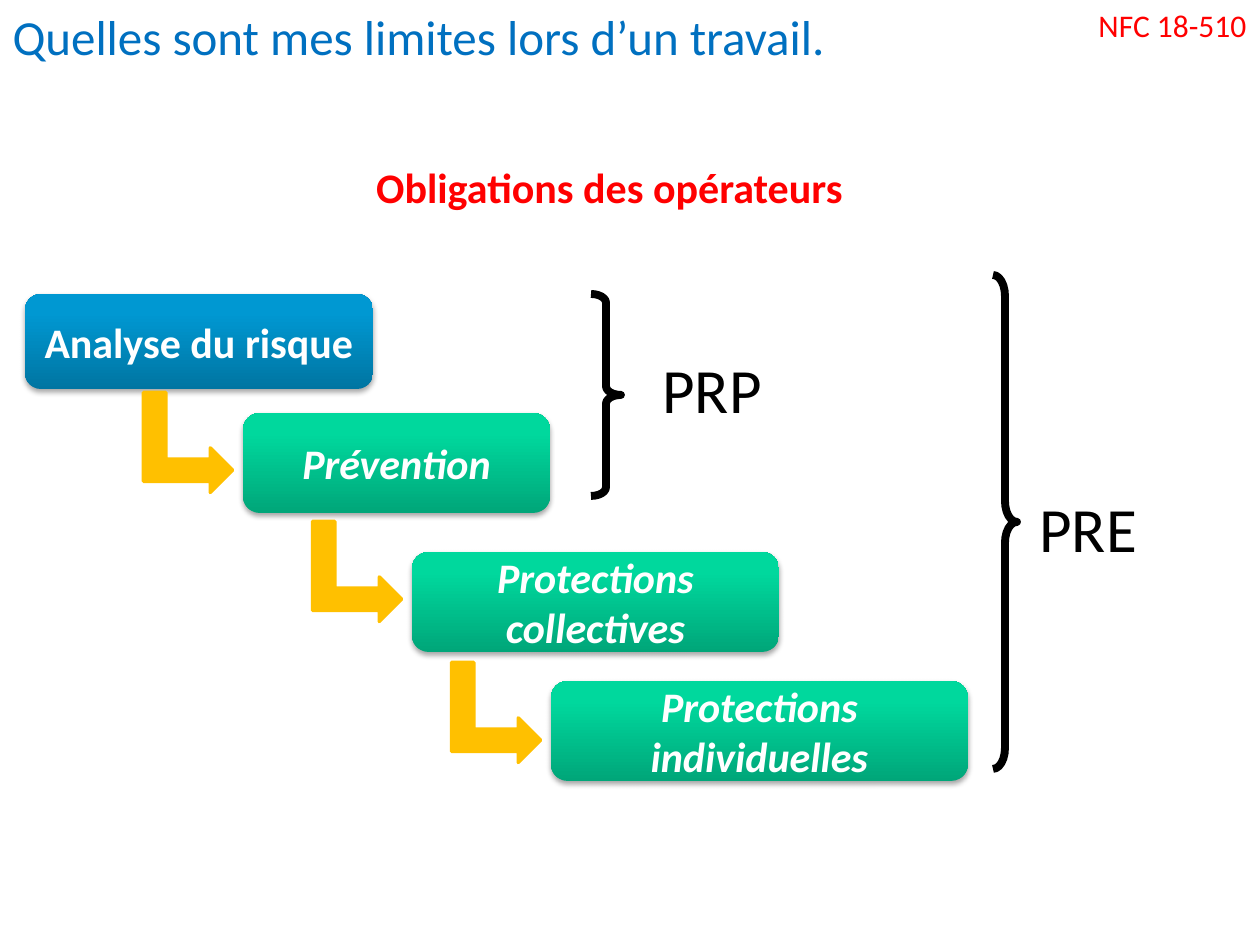
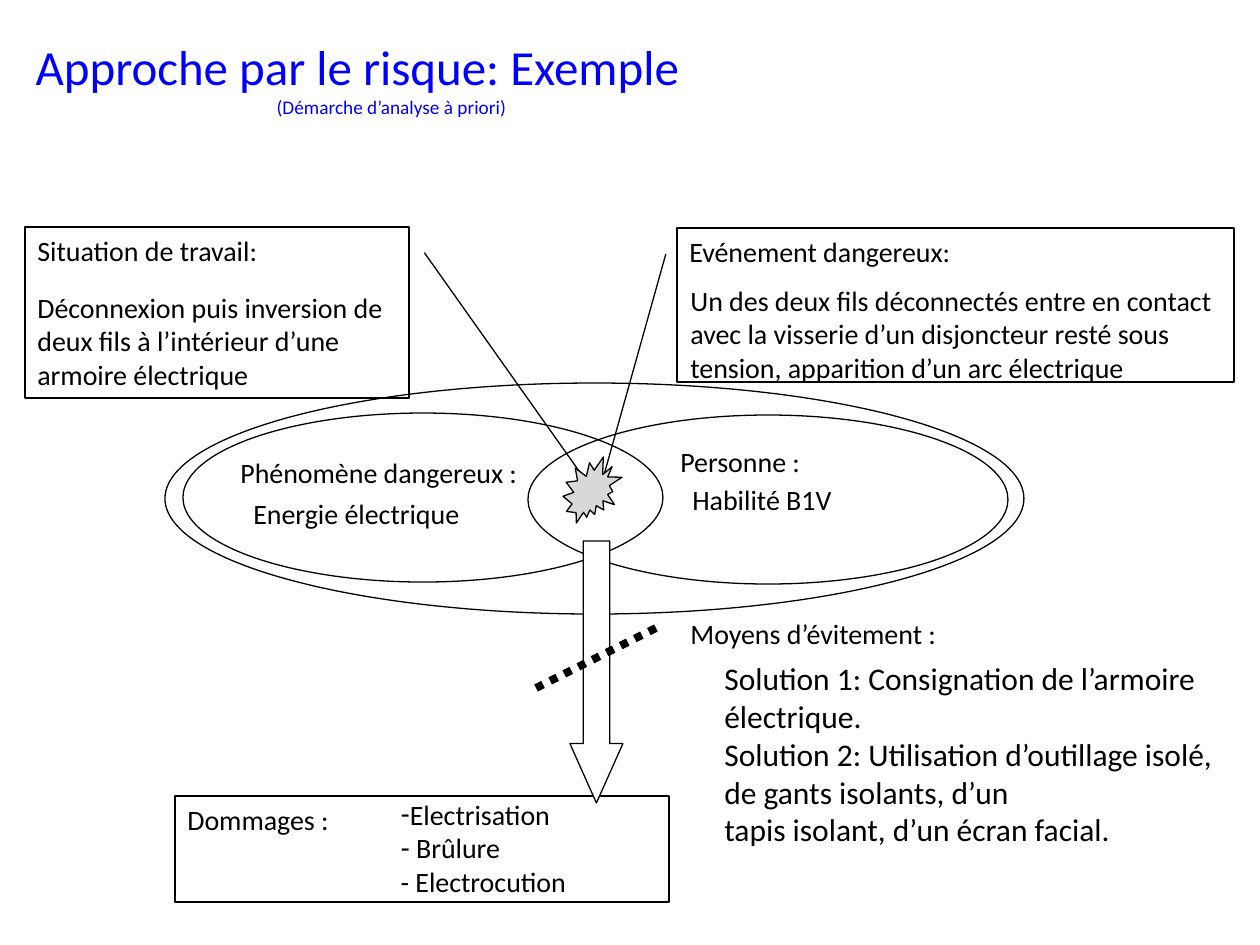
from lxml.etree import SubElement
from pptx import Presentation
from pptx.dml.color import RGBColor
from pptx.enum.dml import MSO_LINE
from pptx.enum.shapes import MSO_CONNECTOR, MSO_SHAPE as SHAPE
from pptx.enum.text import MSO_ANCHOR as ANCHOR, MSO_AUTO_SIZE, PP_ALIGN as ALIGN
from pptx.oxml.ns import qn
from pptx.util import Pt

PX = 914400 / 126
FONT = "Calibri"
BLACK, WHITE, RED, AMBER, GREY = "000000", "FFFFFF", "FF0000", "FFC000", "D8D8D8"
TITLE_BLUE, EXAMPLE_BLUE = "0070C0", "0000FF"
BLUE_GRADIENT = ("0075A2", "0098D2")
GREEN_GRADIENT = ("00A679", "00D89D")


def rgb(value):
    """Turn a hex string into a colour."""
    return RGBColor.from_string(value)


def px(*values):
    """Turn pixels into EMU."""
    return [round(v * PX) for v in values]


def within(box, x, y, w, h):
    """Place a rectangle relative to the top left of a box."""
    return box[0] + x, box[1] + y, w, h


def add_run(p, text, size=16, color=BLACK, **fmt):
    """Add a formatted run to a paragraph."""
    r = p.add_run()
    r.text = text
    for name, value in dict(name=FONT, size=Pt(size), **fmt).items():
        setattr(r.font, name, value)
    r.font.color.rgb = rgb(color)


def write(tf, lines, align=ALIGN.LEFT, anchor=ANCHOR.TOP, wrap=True, **fmt):
    """Fill a text frame with one paragraph per line."""
    frame = dict(word_wrap=wrap, vertical_anchor=anchor, auto_size=MSO_AUTO_SIZE.NONE)
    for name, value in frame.items():
        setattr(tf, name, value)
    for i, line in enumerate(lines):
        p = tf.paragraphs[0] if i == 0 else tf.add_paragraph()
        for name, value in dict(alignment=align, space_before=Pt(0)).items():
            setattr(p, name, value)
        add_run(p, line, **fmt)


def label(s, box, *lines, **fmt):
    """Add a text box."""
    write(s.shapes.add_textbox(*px(*box)).text_frame, lines, **fmt)


def place(sp, box):
    """Move a placeholder to a box."""
    for name, value in zip(("left", "top", "width", "height"), px(*box)):
        setattr(sp, name, value)


def title(s, box, text, color):
    """Place the slide title and return its text frame."""
    place(s.shapes.title, box)
    tf = s.shapes.title.text_frame
    write(tf, [text], size=28, color=color)
    return tf


def shape(s, kind, box, fill=None, line=BLACK, weight=0.75, adj=()):
    """Add a preset shape without a shadow."""
    sp = s.shapes.add_shape(kind, *px(*box))
    sp.shadow.inherit = False
    for i, value in enumerate(adj):
        sp.adjustments[i] = value
    if fill:
        sp.fill.solid()
        sp.fill.fore_color.rgb = rgb(fill)
    else:
        sp.fill.background()
    if line:
        sp.line.color.rgb = rgb(line)
        sp.line.width = Pt(weight)
    else:
        sp.line.fill.background()
    return sp


def soft_shadow(sp):
    """Give a shape a soft shadow below it."""
    effects = sp._element.spPr.find(qn("a:effectLst"))
    shadow = SubElement(effects, qn("a:outerShdw"), blurRad="40000", dist="23000",
                        dir="5400000", rotWithShape="0")
    color = SubElement(shadow, qn("a:srgbClr"), val=BLACK)
    SubElement(color, qn("a:alpha"), val="35000")


def card(s, box, text, gradient, italic):
    """Add a rounded step with a vertical gradient."""
    sp = shape(s, SHAPE.ROUNDED_RECTANGLE, box, line=None)
    sp.fill.gradient()
    sp.fill.gradient_angle = 90
    for stop, color, position in zip(sp.fill.gradient_stops, gradient, (0, 0.8)):
        stop.color.rgb = rgb(color)
        stop.position = position
    soft_shadow(sp)
    write(sp.text_frame, [text], align=ALIGN.CENTER, anchor=ANCHOR.MIDDLE,
          size=24, color=WHITE, bold=True, italic=italic)


def cascade(s, box):
    """Draw the staircase of steps joined by bent arrows."""
    card(s, within(box, 0, 0, 348, 95), "Analyse du risque", BLUE_GRADIENT, False)
    steps = [("Prévention", 218, 119, 307, 15),
             ("Protections collectives", 387, 258, 367, 25),
             ("Protections individuelles", 526, 387, 417, 13)]
    for text, x, y, w, rise in steps:
        card(s, within(box, x, y, w, 100), text, GREEN_GRADIENT, True)
        arrow = shape(s, SHAPE.BENT_UP_ARROW, within(box, x - 105, y - rise, 100, 89),
                      AMBER, AMBER, 2)
        arrow.rotation = 90


def brace(s, box, curve, text, text_box):
    """Draw a right brace and its label."""
    shape(s, SHAPE.RIGHT_BRACE, box, weight=4.5, adj=(curve, 0.5))
    label(s, within(box, *text_box), text, size=36)


def obligations_slide(prs):
    """Build the slide on the operators' obligations."""
    s = prs.slides.add_slide(prs.slide_layouts[5])
    title(s, (0, 0, 1172, 72), "Quelles sont mes limites lors d’un travail.", TITLE_BLUE)
    label(s, (1085, 0, 175, 50), "NFC 18-510", align=ALIGN.CENTER, wrap=False,
          size=18, color=RED)
    label(s, (233, 155, 753, 59), "Obligations des opérateurs", align=ALIGN.CENTER,
          size=24, color=RED, bold=True)
    cascade(s, (25, 294, 943, 487))
    brace(s, (591, 294, 30, 202), 0.29, "PRP", (59, 50, 218, 89))
    brace(s, (993, 275, 24, 494), 0.87, "PRE", (34, 208, 203, 89))


def callout(s, box, adj, heading, text, text_box):
    """Add a bordered callout with a heading and a description."""
    sp = shape(s, SHAPE.LINE_CALLOUT_2, box, adj=adj)
    write(sp.text_frame, [heading])
    label(s, within(box, *text_box), text)


def risk_zones(s, box):
    """Draw the overlapping zones of hazard and person."""
    zones = [(0, 0, 859, 231), (18, 30, 480, 169), (363, 32, 480, 169)]
    for zone in zones:
        shape(s, SHAPE.OVAL, within(box, *zone))
    texts = [("Phénomène dangereux :", 63, 66, 321), ("Energie électrique", 76, 107, 275),
             ("Personne :", 503, 55, 289), ("Habilité B1V", 515, 93, 275)]
    for text, x, y, w in texts:
        label(s, within(box, x, y, w, 82), text)


def damages(s, box):
    """Draw the box of damages with its list."""
    sp = shape(s, SHAPE.RECTANGLE, box)
    write(sp.text_frame, ["Dommages :"])
    body = s.placeholders[1]
    place(body, within(box, 213, -5, 510, 115))
    tf = body.text_frame
    write(tf, ["Electrisation", " Brûlure", "- Electrocution"])
    for p, bullet in zip(tf.paragraphs, ("-", "-", None)):
        pPr = p._p.get_or_add_pPr()
        pPr.set("marL", "0")
        pPr.set("indent", "0")
        if bullet:
            SubElement(pPr, qn("a:buChar"), char=bullet)
        else:
            SubElement(pPr, qn("a:buNone"))


def accident(s, box):
    """Draw the burst, the arrow to the damages and the dotted barrier."""
    shape(s, SHAPE.DOWN_ARROW, within(box, 34, 84, 53, 262), WHITE, adj=(0.5, 1.12))
    shape(s, SHAPE.EXPLOSION2, within(box, 27, 0, 59, 66), GREY)
    x, y, w, h = within(box, 0, 168, 126, 63)
    barrier = s.shapes.add_connector(MSO_CONNECTOR.STRAIGHT, *px(x, y + h, x + w, y))
    barrier.line.color.rgb = rgb(BLACK)
    barrier.line.width = Pt(4.5)
    barrier.line.dash_style = MSO_LINE.ROUND_DOT
    SubElement(barrier._element.spPr, qn("a:effectLst"))


def avoidance(s, box):
    """Write the means of avoidance."""
    label(s, within(box, 0, 0, 396, 129), "Moyens d’évitement :")
    label(s, within(box, 34, 43, 539, 242),
          "Solution 1: Consignation de l’armoire électrique.",
          "Solution 2: Utilisation d’outillage isolé, de gants isolants, d’un",
          "tapis isolant, d’un écran facial.", size=18)


def risk_slide(prs):
    """Build the slide with the worked risk example."""
    s = prs.slides.add_slide(prs.slide_layouts[1])
    tf = title(s, (23, 30, 737, 96), "Approche par le risque: Exemple", EXAMPLE_BLUE)
    p = tf.add_paragraph()
    p.alignment = ALIGN.CENTER
    p.space_before = Pt(0)
    add_run(p, "(Démarche d’analyse à priori)", 11, EXAMPLE_BLUE)
    callout(s, (25, 227, 384, 171), (0.15, 1.04, 0.15, 1.04, 1.45, 1.45),
            "Situation de travail:",
            "Déconnexion puis inversion de deux fils à l’intérieur d’une armoire électrique",
            (0, 57, 384, 115))
    callout(s, (677, 228, 557, 154), (0.17, -0.02, 0.17, -0.02, 1.72, -0.14),
            "Evénement dangereux:",
            "Un des deux fils déconnectés entre en contact avec la visserie d’un "
            "disjoncteur resté sous tension, apparition d’un arc électrique",
            (1, 49, 557, 183))
    risk_zones(s, (165, 383, 859, 231))
    damages(s, (175, 796, 494, 106))
    accident(s, (536, 457, 126, 346))
    avoidance(s, (678, 610, 573, 285))


def main():
    """Build and save the presentation."""
    prs = Presentation()
    prs.slide_width, prs.slide_height = px(1260, 945)
    obligations_slide(prs)
    risk_slide(prs)
    prs.save("out.pptx")


if __name__ == "__main__":
    main()
